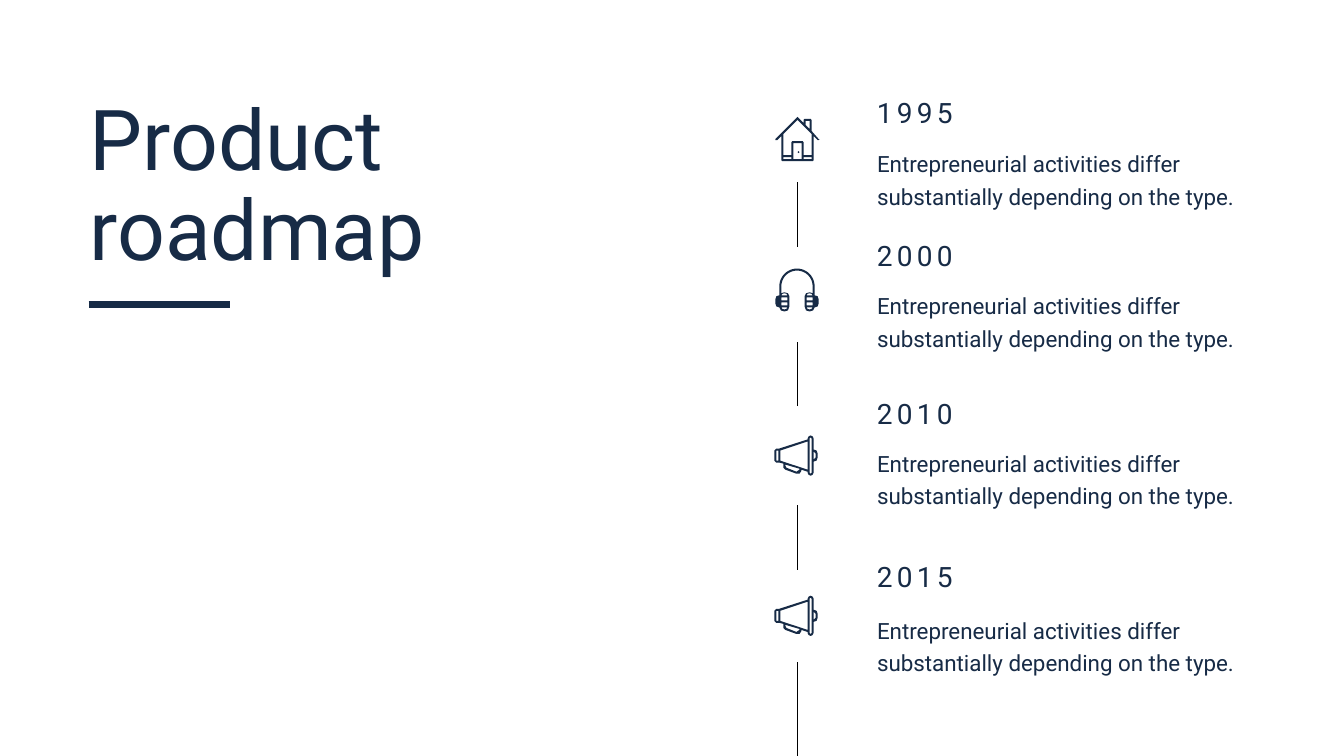
from dataclasses import dataclass
from math import cos, pi, sin

from lxml.etree import SubElement
from pptx import Presentation
from pptx.dml.color import RGBColor
from pptx.enum.shapes import MSO_CONNECTOR
from pptx.enum.text import MSO_ANCHOR, MSO_AUTO_SIZE
from pptx.oxml.ns import qn
from pptx.slide import Slide
from pptx.util import Inches, Pt

NAVY = RGBColor(0x17, 0x2B, 0x46)
BLACK = RGBColor(0x00, 0x00, 0x00)
DESCRIPTION = "Entrepreneurial activities differ substantially depending on the type."


def rectangle(left, top, right, bottom):
    return [(left, top), (right, top), (right, bottom), (left, bottom)]


def upper_arc(center_x, center_y, radius, steps=24):
    angles = [pi * step / steps for step in range(steps + 1)]
    return [(center_x + radius * cos(a), center_y - radius * sin(a)) for a in angles]


def mirror(points, width):
    return [(width - x, y) for x, y in reversed(points)]


def house():
    outline = [(43, 22), (36, 14), (36, 3), (35, 2), (29, 2), (28, 3), (28, 6),
               (23, 1), (22, 0), (21, 1), (0, 22), (0, 23), (1, 23), (2, 23),
               (6, 19), (6, 43), (7, 44), (37, 44), (38, 43), (38, 19),
               (42, 23), (43, 23), (44, 22)]
    room = [(36, 38), (28, 38), (28, 25), (27, 24), (17, 24), (16, 25),
            (16, 38), (8, 38), (8, 17), (22, 3), (36, 17)]
    chimney = [(30, 4), (34, 4), (34, 12), (30, 8)]
    knob = [(23, 36), (24, 35), (23, 34), (22, 35)]
    return [outline, room, chimney, rectangle(8, 40, 16, 42),
            rectangle(28, 40, 36, 42), rectangle(18, 26, 26, 42), knob]


def headphones():
    width = 43
    left_cup = [(4, 27), (1, 28), (0, 31), (0, 35), (1, 38), (4, 39), (5.5, 42),
                (9, 43), (12.5, 42), (14, 38), (14, 28), (12.5, 25), (9, 24), (6, 25)]
    left_pads = [rectangle(6, 29, 12, 32), rectangle(6, 34, 12, 37),
                 [(6, 39), (12, 39), (11, 40.5), (9, 41), (7, 40.5)],
                 [(6, 27), (7, 25.5), (9, 25), (11, 25.5), (12, 27)]]
    inner_band = list(reversed(upper_arc(21.5, 18, 15.5)))
    outline = upper_arc(21.5, 18, 17.5) + left_cup + inner_band + mirror(left_cup, width)
    return [outline] + left_pads + [mirror(pad, width) for pad in left_pads]


def megaphone():
    outline = [(39, 14), (39, 3), (38, 1), (36, 0), (34, 1), (33, 3), (33, 4),
               (5, 13), (2, 13), (0, 15), (0, 25), (2, 27), (5, 27), (9, 28),
               (9, 32), (11, 34), (22, 38), (25, 38), (27, 35), (27, 34),
               (33, 36), (33, 37), (34, 39), (36, 40), (38, 39), (39, 37),
               (39, 26), (42, 25), (43, 22), (43, 18), (42, 15)]
    button = [(39, 24), (41, 22), (41, 18), (39, 16)]
    rim = [(37, 37), (36, 38), (35, 37), (35, 3), (36, 2), (37, 3)]
    cone = [(33, 34), (6, 25), (6, 15), (33, 6)]
    handle = [(25, 34), (22, 36), (12, 32), (11, 30), (11, 29), (25, 33)]
    return [outline, button, rim, cone, handle, rectangle(2, 15, 4, 25)]


@dataclass
class RoadmapPage:
    page: Slide
    font: str = "Roboto"
    color: RGBColor = NAVY

    def text(self, content, left, top, width, height, size, line_spacing,
             letter_spacing=0, grow=False):
        box = self.page.shapes.add_textbox(
            Inches(left), Inches(top), Inches(width), Inches(height))
        frame = box.text_frame
        frame.word_wrap = True
        frame.vertical_anchor = MSO_ANCHOR.TOP
        frame.auto_size = MSO_AUTO_SIZE.SHAPE_TO_FIT_TEXT if grow else MSO_AUTO_SIZE.NONE
        para = frame.paragraphs[0]
        para.line_spacing = line_spacing
        span = para.add_run()
        span.text = content
        span.font.name = self.font
        span.font.size = Pt(size)
        span.font.color.rgb = self.color
        if letter_spacing:
            span.font._element.set("spc", str(letter_spacing * 100))

    def line(self, start_x, start_y, end_x, end_y, color, weight):
        connector = self.page.shapes.add_connector(
            MSO_CONNECTOR.STRAIGHT, Inches(start_x), Inches(start_y),
            Inches(end_x), Inches(end_y))
        connector.line.color.rgb = color
        connector.line.width = Pt(weight)
        SubElement(connector._element.spPr, qn("a:effectLst"))

    def icon(self, contours, left, top):
        scaled = [[(Inches(x / 100), Inches(y / 100)) for x, y in contour]
                  for contour in contours]
        builder = self.page.shapes.build_freeform(*scaled[0][0])
        builder.add_line_segments(scaled[0][1:], close=True)
        for contour in scaled[1:]:
            builder.move_to(*contour[0])
            builder.add_line_segments(contour[1:], close=True)
        shape = builder.convert_to_shape(Inches(left), Inches(top))
        shape.shadow.inherit = False
        shape.fill.solid()
        shape.fill.fore_color.rgb = self.color
        shape.line.fill.background()


def main():
    deck = Presentation()
    deck.slide_width = Inches(13.33)
    deck.slide_height = Inches(7.5)
    roadmap = RoadmapPage(deck.slides.add_slide(deck.slide_layouts[6]))

    roadmap.text("Product roadmap", 0.79, 0.92, 6.07, 2.1, 60, 0.9)
    roadmap.line(0.88, 3.02, 2.28, 3.02, NAVY, 5)

    milestones = [
        ("1995", 0.94, 1.39, house(), 7.69, 1.16, 1.81, 2.45),
        ("2000", 2.35, 2.8, headphones(), 7.69, 2.66, 3.39, 4.03),
        ("2010", 3.92, 4.36, megaphone(), 7.68, 4.32, 5.01, 5.65),
        ("2015", 5.54, 6.02, megaphone(), 7.68, 5.91, 6.57, 7.5),
    ]
    for year, year_top, text_top, icon, icon_left, icon_top, line_top, line_end in milestones:
        roadmap.text(year, 8.6, year_top, 1.33, 0.45, 20, 0.9, letter_spacing=3)
        roadmap.text(DESCRIPTION, 8.6, text_top, 4.05, 0.75, 16, 1.2, grow=True)
        roadmap.icon(icon, icon_left, icon_top)
        roadmap.line(7.91, line_end, 7.91, line_top, BLACK, 0.75)

    deck.save("out.pptx")


if __name__ == "__main__":
    main()
